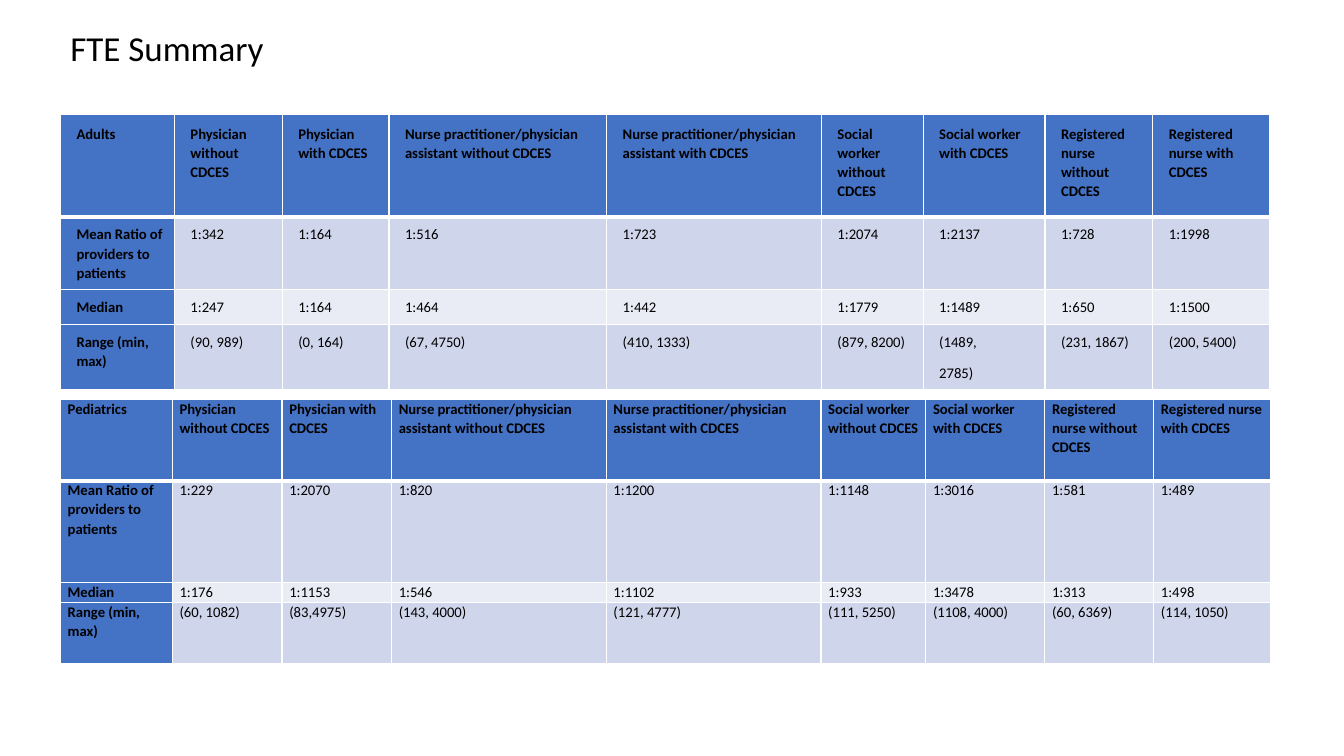
"""Build the FTE summary slide with staffing ratios for adults and pediatrics."""
from dataclasses import dataclass

from lxml import etree
from pptx import Presentation
from pptx.dml.color import RGBColor
from pptx.enum.text import MSO_ANCHOR
from pptx.oxml.ns import qn
from pptx.slide import Slide
from pptx.table import _Cell
from pptx.text.text import _Paragraph
from pptx.util import Pt

MIDDLE = MSO_ANCHOR.MIDDLE
TOP = MSO_ANCHOR.TOP

COLORS = {
    "text": "000000",
    "border": "FFFFFF",
    "header": "4472C4",
    "band_dark": "CFD5EA",
    "band_light": "E9EBF5",
}
FONT = "Calibri"
LEFT, WIDTH = 43.2, 864
THIN, THICK = 1, 3
CELL_PARAGRAPH = {"line_spacing": 1.07, "space_after": Pt(8)}
TITLE_PARAGRAPH = {"line_spacing": 0.9}

PROVIDERS = [
    "Physician without CDCES",
    "Physician with CDCES",
    "Nurse practitioner/physician assistant without CDCES",
    "Nurse practitioner/physician assistant with CDCES",
    "Social worker without CDCES",
    "Social worker with CDCES",
    "Registered nurse without CDCES",
    "Registered nurse with CDCES",
]
MEASURES = ["Mean Ratio of providers to patients", "Median", "Range (min, max)"]


@dataclass(frozen=True)
class Insets:
    left: float
    top: float
    right: float
    bottom: float


@dataclass(frozen=True)
class RatioTable:
    group: str
    top: float
    columns: list[float]
    rows: list[float]
    header_insets: Insets
    body_insets: Insets
    values: list[list[str]]


TIGHT = Insets(5.2, 0, 5.2, 0)
TABLES = [
    RatioTable(
        "Adults", 81.4,
        [81.4, 77, 76.3, 155.5, 153.4, 72.7, 87.1, 77, 83.5],
        [73.4, 47.5, 24.5, 41],
        Insets(11.5, 7.2, 7.2, 7.2), Insets(11.5, 5.8, 5.8, 5.8),
        [
            ["1:342", "1:164", "1:516", "1:723",
             "1:2074", "1:2137", "1:728", "1:1998"],
            ["1:247", "1:164", "1:464", "1:442",
             "1:1779", "1:1489", "1:650", "1:1500"],
            ["(90, 989)", "(0, 164)", "(67, 4750)", "(410, 1333)",
             "(879, 8200)", "(1489,\n2785)", "(231, 1867)", "(200, 5400)"],
        ],
    ),
    RatioTable(
        "Pediatrics", 285.1,
        [79.9, 78.4, 78.2, 153.4, 153.4, 74.9, 85, 77.8, 83.5],
        [58.3, 72.7, 14.4, 43.2],
        TIGHT, TIGHT,
        [
            ["1:229", "1:2070", "1:820", "1:1200",
             "1:1148", "1:3016", "1:581", "1:489"],
            ["1:176", "1:1153", "1:546", "1:1102",
             "1:933", "1:3478", "1:313", "1:498"],
            ["(60, 1082)", "(83,4975)", "(143, 4000)", "(121, 4777)",
             "(111, 5250)", "(1108, 4000)", "(60, 6369)", "(114, 1050)"],
        ],
    ),
]


def format_paragraph(p: _Paragraph, size: float, bold: bool, layout: dict) -> None:
    for name, value in layout.items():
        setattr(p, name, value)
    for r in p.runs:
        for name, value in {"name": FONT, "size": Pt(size), "bold": bold}.items():
            setattr(r.font, name, value)
        r.font.color.rgb = RGBColor.from_string(COLORS["text"])


def add_borders(cell: _Cell, top: float, bottom: float) -> None:
    tc_pr = cell._tc.get_or_add_tcPr()
    widths = {"a:lnL": THIN, "a:lnR": THIN, "a:lnT": top, "a:lnB": bottom}
    for tag, width in widths.items():
        line = etree.SubElement(tc_pr, qn(tag), w=str(Pt(width)))
        fill = etree.SubElement(line, qn("a:solidFill"))
        etree.SubElement(fill, qn("a:srgbClr"), val=COLORS["border"])


def fill_cell(cell: _Cell, text: str, color: str, bold: bool, insets: Insets) -> None:
    tf = cell.text_frame
    tf.text = text
    for p in tf.paragraphs:
        format_paragraph(p, 10.5, bold, CELL_PARAGRAPH)
    for side in ("left", "top", "right", "bottom"):
        setattr(cell, f"margin_{side}", Pt(getattr(insets, side)))
    cell.vertical_anchor = TOP
    cell.fill.solid()
    cell.fill.fore_color.rgb = RGBColor.from_string(COLORS[color])


def add_ratio_table(s: Slide, spec_table: RatioTable) -> None:
    texts = [[spec_table.group, *PROVIDERS]]
    texts += [[m, *row] for m, row in zip(MEASURES, spec_table.values)]
    sp = s.shapes.add_table(
        len(texts), len(texts[0]),
        Pt(LEFT), Pt(spec_table.top), Pt(WIDTH), Pt(sum(spec_table.rows)),
    )
    table = sp.table
    table.horz_banding = False
    for column, width in zip(table.columns, spec_table.columns):
        column.width = Pt(width)
    for row, height in zip(table.rows, spec_table.rows):
        row.height = Pt(height)
    for i, row_texts in enumerate(texts):
        band = "band_dark" if i % 2 else "band_light"
        insets = spec_table.body_insets if i else spec_table.header_insets
        for j, text in enumerate(row_texts):
            label = i == 0 or j == 0
            cell = table.cell(i, j)
            add_borders(cell, THICK if i == 1 else THIN, THIN if i else THICK)
            fill_cell(cell, text, "header" if label else band, label, insets)


def add_title(s: Slide, text: str) -> None:
    sp = s.shapes.add_textbox(Pt(LEFT), Pt(18), Pt(WIDTH), Pt(36))
    tf = sp.text_frame
    tf.word_wrap = True
    tf.vertical_anchor = MIDDLE
    tf.text = text
    format_paragraph(tf.paragraphs[0], 25, False, TITLE_PARAGRAPH)


def main() -> None:
    prs = Presentation()
    prs.slide_width, prs.slide_height = Pt(960), Pt(540)
    s = prs.slides.add_slide(prs.slide_layouts[6])
    add_title(s, "FTE Summary")
    for ratio_table in TABLES:
        add_ratio_table(s, ratio_table)
    prs.save("out.pptx")


if __name__ == "__main__":
    main()
